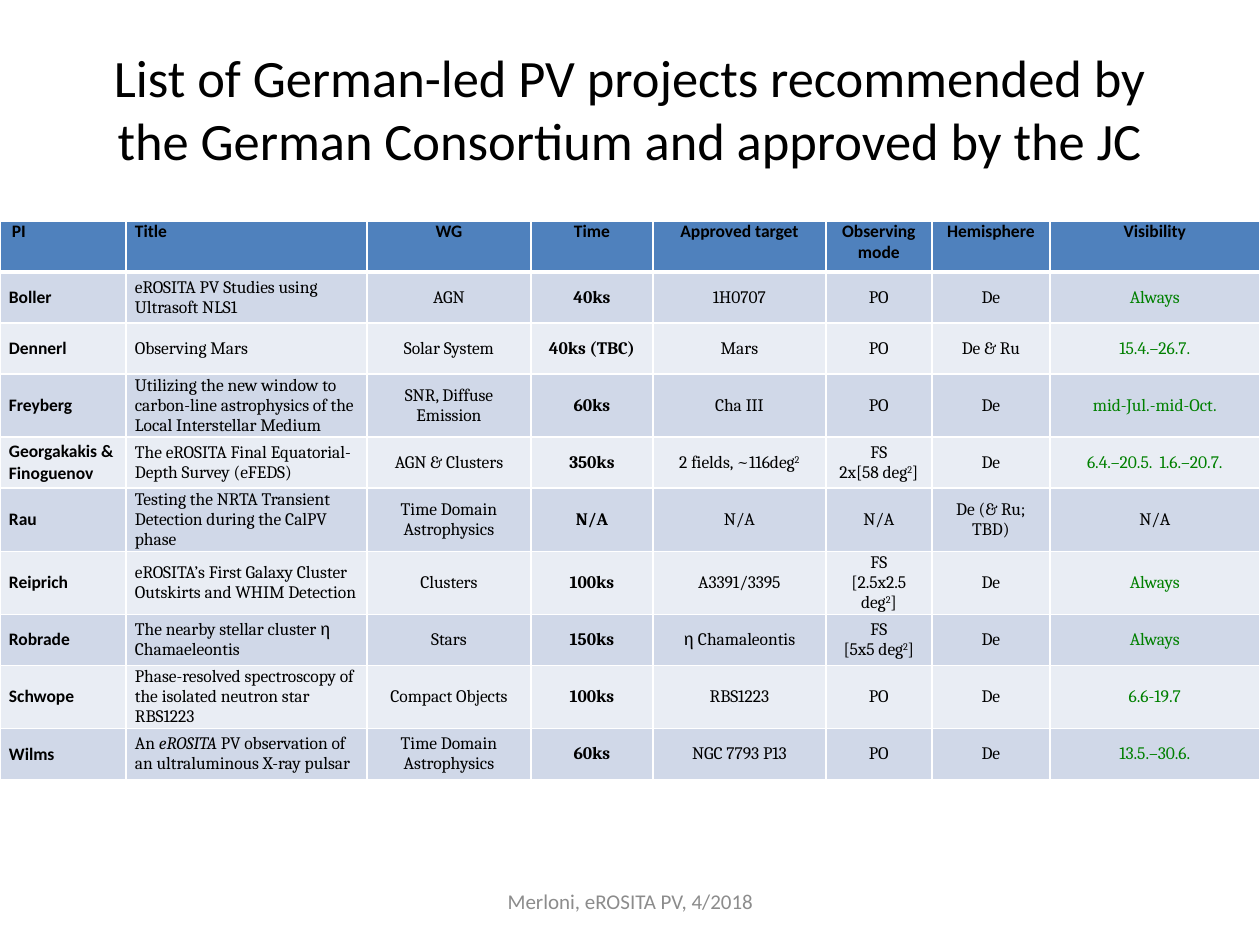
from lxml.etree import SubElement
from pptx import Presentation
from pptx.dml.color import RGBColor
from pptx.enum.text import MSO_ANCHOR, PP_ALIGN
from pptx.oxml.ns import qn
from pptx.util import Emu, Pt

PX = 914400 // 126  # EMU in one px

BLACK = RGBColor(0x00, 0x00, 0x00)
WHITE = RGBColor(0xFF, 0xFF, 0xFF)
GREY = RGBColor(0x8C, 0x8C, 0x8C)
GREEN = RGBColor(0x00, 0x80, 0x00)
HEADER_BLUE = RGBColor(0x4F, 0x81, 0xBD)
BANDS = (RGBColor(0xD0, 0xD8, 0xE8), RGBColor(0xE9, 0xED, 0xF4))

TITLE = ("List of German-led PV projects recommended by "
         "the German Consortium and approved by the JC")
FOOTER = "Merloni, eROSITA PV, 4/2018"

COLUMN_WIDTHS = (126, 241, 164, 122, 173, 106, 118, 210)
ROW_HEIGHT = 51
HEADER = ("PI", "Title", "WG", "Time", "Approved target", "Observing mode",
          "Hemisphere", "Visibility")
# ^...^ is superscript, *...* is italic, a line break starts a paragraph
PROJECTS = (
    ("Boller", "eROSITA PV Studies using Ultrasoft NLS1", "AGN", "40ks",
     "1H0707", "PO", "De", "Always"),
    ("Dennerl", "Observing Mars", "Solar System", "40ks (TBC)",
     "Mars", "PO", "De & Ru", "15.4.–26.7."),
    ("Freyberg", "Utilizing the new window to carbon-line astrophysics of the "
     "Local Interstellar Medium", "SNR, Diffuse Emission", "60ks",
     "Cha III", "PO", "De", "mid-Jul.-mid-Oct."),
    ("Georgakakis & Finoguenov",
     "The eROSITA Final Equatorial-Depth Survey (eFEDS)", "AGN & Clusters",
     "350ks", "2 fields, ~116deg^2^", "FS\n2x[58 deg^2^]", "De",
     "6.4.–20.5.  1.6.–20.7."),
    ("Rau", "Testing the NRTA Transient Detection during the CalPV phase",
     "Time Domain Astrophysics", "N/A", "N/A", "N/A", "De (& Ru; TBD)", "N/A"),
    ("Reiprich", "eROSITA’s First Galaxy Cluster Outskirts and WHIM Detection",
     "Clusters", "100ks", "A3391/3395", "FS\n[2.5x2.5 deg^2^]", "De", "Always"),
    ("Robrade", "The nearby stellar cluster η Chamaeleontis", "Stars", "150ks",
     "η Chamaleontis", "FS\n[5x5 deg^2^]", "De", "Always"),
    ("Schwope", "Phase-resolved spectroscopy of the isolated neutron star "
     "RBS1223", "Compact Objects", "100ks", "RBS1223", "PO", "De", "6.6-19.7"),
    ("Wilms", "An *eROSITA *PV observation of an ultraluminous X-ray pulsar",
     "Time Domain Astrophysics", "60ks", "NGC 7793 P13", "PO", "De",
     "13.5.–30.6."),
)


def px(length):
    return Emu(length * PX)


def set_all(target, values):
    for name, value in values.items():
        setattr(target, name, value)


def add_span(para, text, color, font):
    span = para.add_run()
    span.text = text
    set_all(span.font, font)
    span.font.color.rgb = color
    return span


def write_text(frame, text, align, color, font):
    """Write marked-up text, one paragraph per line."""
    for index, line in enumerate(text.split("\n")):
        para = frame.add_paragraph() if index else frame.paragraphs[0]
        para.alignment = align
        for raised, part in enumerate(line.split("^")):
            for slanted, piece in enumerate(part.split("*")):
                if not piece:
                    continue
                span = add_span(para, piece, color, font)
                if slanted % 2:
                    span.font.italic = True
                if raised % 2:
                    span._r.get_or_add_rPr().set("baseline", "30000")


def add_label(page, place, text, color, size):
    box = page.shapes.add_textbox(*map(px, place))
    set_all(box.text_frame,
            {"word_wrap": True, "vertical_anchor": MSO_ANCHOR.MIDDLE})
    write_text(box.text_frame, text, PP_ALIGN.CENTER, color,
               {"name": "Calibri", "size": Pt(size)})


def add_borders(cell, widths):
    properties = cell._tc.get_or_add_tcPr()
    for side, width in widths.items():
        line = SubElement(properties, qn(f"a:ln{side}"), w=str(Pt(width)))
        fill = SubElement(line, qn("a:solidFill"))
        SubElement(fill, qn("a:srgbClr"), val=str(WHITE))


def fill_cell(cell, text, row, column):
    is_header = row == 0
    set_all(cell, {
        "margin_left": px(9), "margin_right": px(9),
        "margin_top": 0, "margin_bottom": 0,
        "vertical_anchor": MSO_ANCHOR.TOP if is_header else MSO_ANCHOR.MIDDLE,
    })
    # The rule below the header is heavier than the grid
    add_borders(cell, {"L": 1, "R": 1, "T": 3 if row == 1 else 1,
                       "B": 3 if is_header else 1})
    cell.fill.solid()
    cell.fill.fore_color.rgb = HEADER_BLUE if is_header else BANDS[(row - 1) % 2]

    heading = HEADER[column]
    is_date = heading == "Visibility" and not is_header and text != "N/A"
    write_text(
        cell.text_frame, text,
        PP_ALIGN.LEFT if heading in ("PI", "Title") else PP_ALIGN.CENTER,
        GREEN if is_date else BLACK,
        {"name": "Calibri" if is_header or heading == "PI" else "Cambria",
         "size": Pt(10),
         "bold": is_header or heading in ("PI", "Time")})


def add_projects(page):
    rows = (HEADER, *PROJECTS)
    table = page.shapes.add_table(
        len(rows), len(HEADER), px(0), px(221),
        px(sum(COLUMN_WIDTHS)), px(ROW_HEIGHT * len(rows))).table
    for column, width in zip(table.columns, COLUMN_WIDTHS):
        column.width = px(width)
    for row, texts in enumerate(rows):
        table.rows[row].height = px(ROW_HEIGHT)
        for column, text in enumerate(texts):
            fill_cell(table.cell(row, column), text, row, column)
    # The first heading is slightly indented
    first = table.cell(0, 0).text_frame.paragraphs[0]
    first._p.get_or_add_pPr().set("marL", str(px(3)))


def main():
    deck = Presentation()
    set_all(deck, {"slide_width": px(1260), "slide_height": px(945)})
    page = deck.slides.add_slide(deck.slide_layouts[6])

    # Title
    add_label(page, (63, 29, 1134, 158), TITLE, BLACK, 30)
    # Table of projects
    add_projects(page)
    # Footer
    add_label(page, (431, 876, 399, 50), FOOTER, GREY, 12)

    deck.save("out.pptx")


if __name__ == "__main__":
    main()
